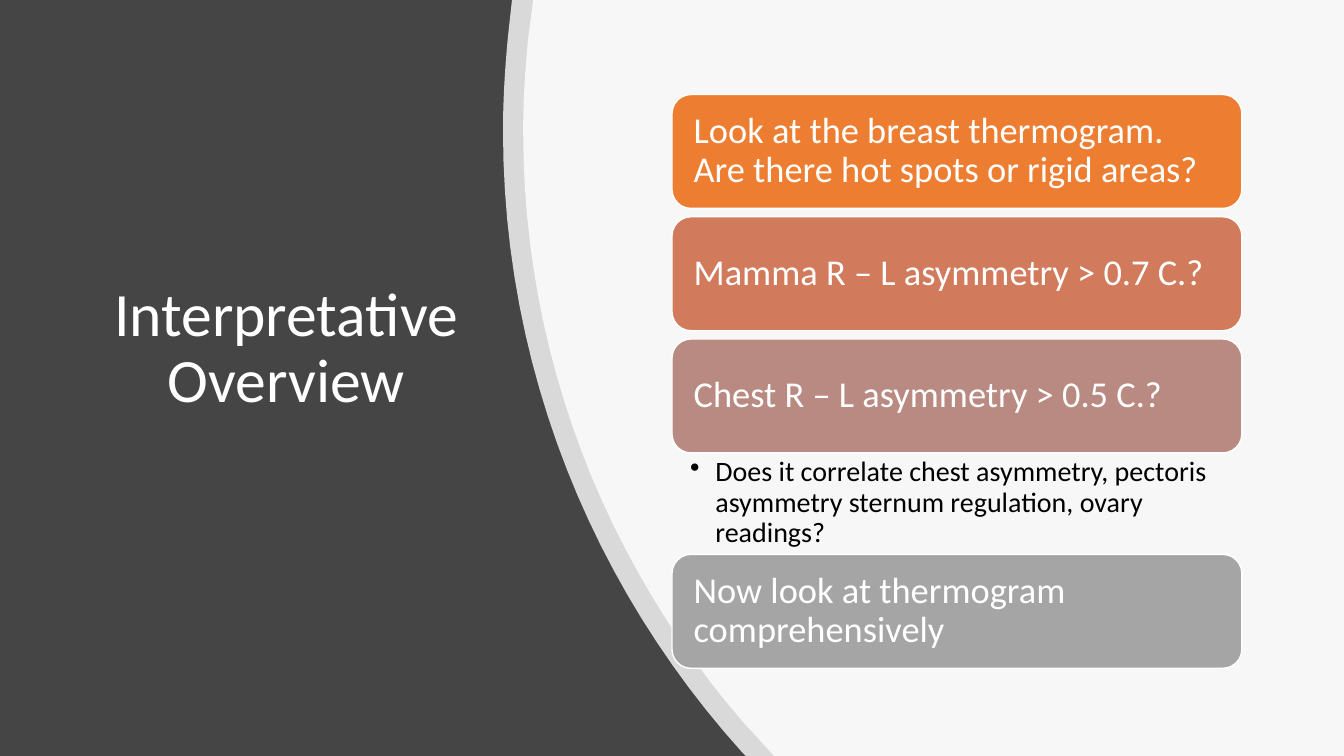
import lxml.etree
import pptx
import pptx.dml.color
import pptx.enum.shapes
import pptx.enum.text
import pptx.oxml.ns
import pptx.util

WIDTH = pptx.util.Inches(13.333)
HEIGHT = pptx.util.Inches(7.5)
FONT = "Calibri"
WHITE = "FFFFFF"
CURVE_STEPS = 24
QUESTION_LEFT, QUESTION_WIDTH = 50, 42.4
QUESTION_TOP, QUESTION_HEIGHT, QUESTION_STEP = 12.5, 15.07, 16.17
DETAIL_TOP, DETAIL_HEIGHT = 60, 13.33

QUESTIONS = [
    ("Look at the breast thermogram. Are there hot spots or rigid areas?", "ED7D31"),
    ("Mamma R – L asymmetry > 0.7 C.?", "D17B5C"),
    ("Chest R – L asymmetry > 0.5 C.?", "B98A82"),
]
CONCLUSION = ("Now look at thermogram comprehensively", "A5A5A5")
DETAIL = "Does it correlate chest asymmetry, pectoris asymmetry sternum regulation, ovary readings?"

OUTER_EDGE = [
    [(55.2, 99.47), (44.18, 77.73), (37.43, 48.93), (37.43, 17.33)],
    [(37.43, 17.33), (37.43, 13.07), (37.58, 8.93), (37.8, 4.8)],
]
INNER_EDGE = [
    [(55.2, 95.33), (45.08, 74.4), (38.93, 47.2), (38.93, 17.33)],
    [(38.93, 17.33), (38.93, 13.2), (39.08, 9.2), (39.3, 5.07)],
]


def place(x, y):
    return round(WIDTH * x / 100), round(HEIGHT * y / 100)


def area(left, top, width, height):
    return *place(left, top), *place(width, height)


def paint(fill, colour):
    fill.solid()
    fill.fore_color.rgb = pptx.dml.color.RGBColor.from_string(colour)


def add_element(parent, tag, **attributes):
    return lxml.etree.SubElement(parent, pptx.oxml.ns.qn(tag), attributes)


def write(frame, words, size, colour, align, insets):
    frame.word_wrap = True
    frame.auto_size = pptx.enum.text.MSO_AUTO_SIZE.NONE
    frame.margin_left, frame.margin_top, frame.margin_right, frame.margin_bottom = (
        pptx.util.Inches(inset) for inset in insets)
    paragraph = frame.paragraphs[0]
    paragraph.alignment = align
    paragraph.line_spacing = 0.9
    run = paragraph.add_run()
    run.text = words
    run.font.name = FONT
    run.font.size = pptx.util.Pt(size)
    paint(run.font.fill, colour)
    return paragraph


def add_title(slide, words):
    title = slide.shapes.title
    title.left, title.top, title.width, title.height = area(6.6, 20.4, 29.4, 51.73)
    title.text_frame.vertical_anchor = pptx.enum.text.MSO_ANCHOR.MIDDLE
    write(title.text_frame, words, 44, WHITE, pptx.enum.text.PP_ALIGN.CENTER,
          (0.1, 0.05, 0.1, 0.05))


def curve_points(controls):
    for step in range(CURVE_STEPS + 1):
        t = step / CURVE_STEPS
        weights = ((1 - t) ** 3, 3 * t * (1 - t) ** 2, 3 * t ** 2 * (1 - t), t ** 3)
        yield tuple(sum(w * point[axis] for w, point in zip(weights, controls))
                    for axis in (0, 1))


def add_curved_panel(slide, top_x, bottom_x, edge):
    outline = [(100, 0), (100, 100), (bottom_x, 100)]
    for controls in edge:
        outline.extend(curve_points(controls))
    builder = slide.shapes.build_freeform(*place(top_x, 0))
    builder.add_line_segments([place(*point) for point in outline], close=True)
    panel = builder.convert_to_shape()
    panel.shadow.inherit = False
    panel.line.fill.background()
    paint(panel.fill, WHITE)
    colour = panel.fill._xPr.find(".//" + pptx.oxml.ns.qn("a:srgbClr"))
    add_element(colour, "a:alpha", val="80000")


def add_question(slide, top, words, colour):
    card = slide.shapes.add_shape(
        pptx.enum.shapes.MSO_SHAPE.ROUNDED_RECTANGLE,
        *area(QUESTION_LEFT, top, QUESTION_WIDTH, QUESTION_HEIGHT))
    card.shadow.inherit = False
    paint(card.fill, colour)
    paint(card.line.fill, WHITE)
    card.line.width = pptx.util.Pt(1)
    card.text_frame.vertical_anchor = pptx.enum.text.MSO_ANCHOR.MIDDLE
    write(card.text_frame, words, 26, WHITE, pptx.enum.text.PP_ALIGN.LEFT,
          (0.16, 0.16, 0.16, 0.16))


def add_detail(slide, words):
    detail = slide.shapes.add_textbox(
        *area(QUESTION_LEFT, DETAIL_TOP, QUESTION_WIDTH, DETAIL_HEIGHT))
    paragraph = write(detail.text_frame, words, 20, "000000",
                      pptx.enum.text.PP_ALIGN.LEFT, (0.18, 0.04, 0.2, 0.04))
    properties = paragraph._p.get_or_add_pPr()
    indent = pptx.util.Inches(0.25)
    properties.set("marL", str(indent))
    properties.set("indent", str(-indent))
    add_element(properties, "a:buChar", char="•")


def main():
    deck = pptx.Presentation()
    deck.slide_width, deck.slide_height = WIDTH, HEIGHT
    slide = deck.slides.add_slide(deck.slide_layouts.get_by_name("Title Only"))
    paint(slide.background.fill, "454545")
    add_title(slide, "Interpretative Overview")
    add_curved_panel(slide, 38.1, 55.5, OUTER_EDGE)
    add_curved_panel(slide, 39.68, 57.6, INNER_EDGE)
    for row, (words, colour) in enumerate(QUESTIONS):
        add_question(slide, QUESTION_TOP + row * QUESTION_STEP, words, colour)
    add_detail(slide, DETAIL)
    add_question(slide, DETAIL_TOP + DETAIL_HEIGHT, *CONCLUSION)
    deck.save("out.pptx")


if __name__ == "__main__":
    main()
